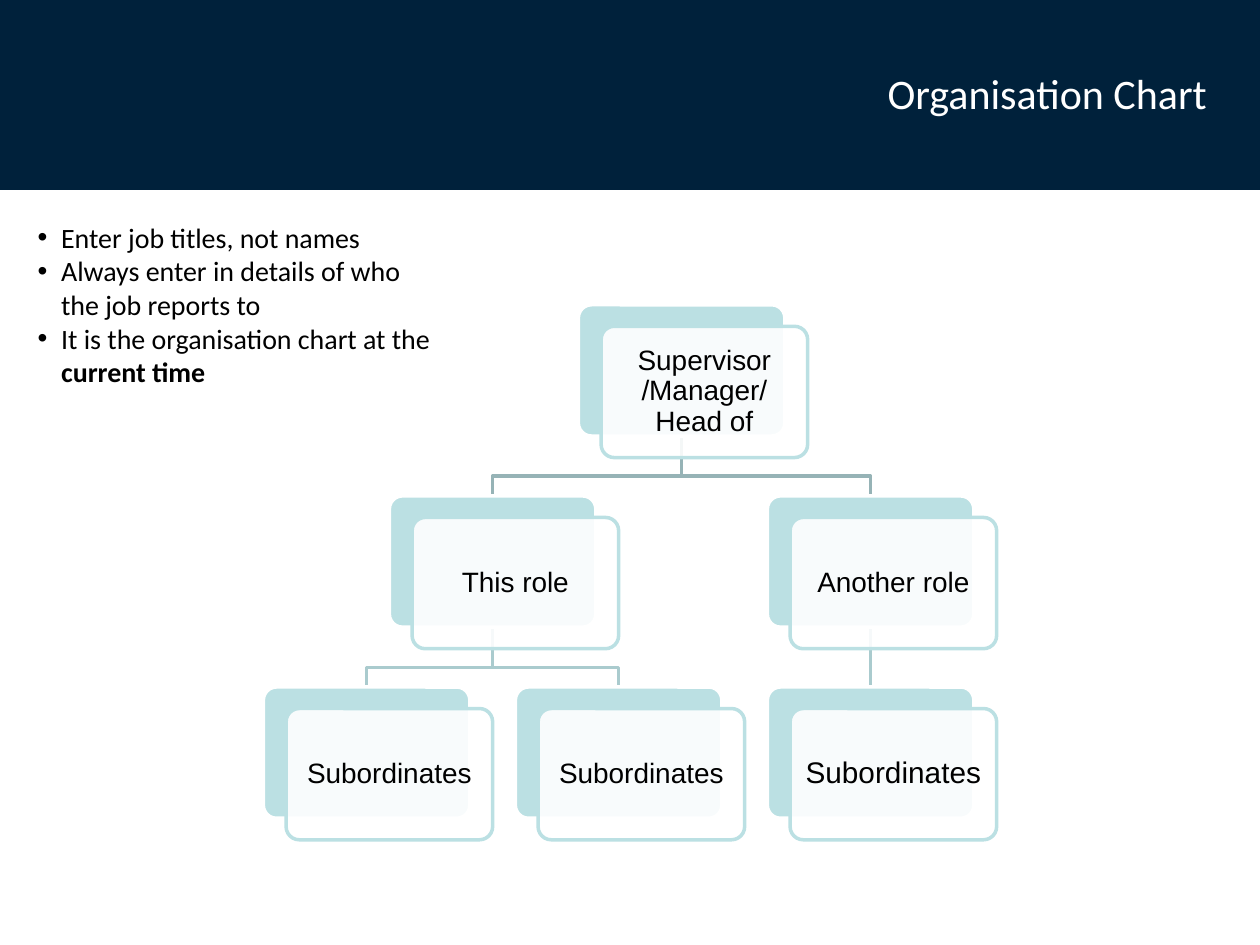
import pptx
import pptx.util
import pptx.dml.color
import pptx.enum.shapes
import pptx.enum.text
import pptx.oxml
import pptx.oxml.ns

Pt = pptx.util.Pt
MSO_SHAPE = pptx.enum.shapes.MSO_SHAPE
ALIGN = pptx.enum.text.PP_ALIGN
MIDDLE = pptx.enum.text.MSO_ANCHOR.MIDDLE


def color(value):
    return pptx.dml.color.RGBColor.from_string(value)


def add_run(p, text, size, name, ink, bold=False):
    r = p.add_run()
    r.text = text
    for key, value in {"size": Pt(size), "name": name, "bold": bold}.items():
        setattr(r.font, key, value)
    r.font.color.rgb = color(ink)


prs = pptx.Presentation()
prs.slide_width, prs.slide_height = Pt(720), Pt(540)
s = prs.slides.add_slide(prs.slide_layouts[6])

band = s.shapes.add_shape(MSO_SHAPE.RECTANGLE, 0, 0, Pt(720), Pt(108.6))
band.shadow.inherit = False
band.fill.solid()
band.fill.fore_color.rgb = color("00213B")
band.line.fill.background()

title = s.shapes.add_textbox(Pt(36.7), Pt(26), Pt(660), Pt(54))
tf = title.text_frame
for key, value in {"word_wrap": True, "vertical_anchor": MIDDLE}.items():
    setattr(tf, key, value)
p = tf.paragraphs[0]
p.alignment = ALIGN.RIGHT
add_run(p, "Organisation Chart", 24, "Calibri", "FFFFFF")

card_w, card_h = 118, 75
top, level_step = 174.2, 109.2
roles = [
    ("Supervisor /Manager/ Head of", 330.5, 0, None, 16),
    ("This role", 222.5, 1, 0, 16),
    ("Subordinates", 150.5, 2, 1, 16),
    ("Subordinates", 294.5, 2, 1, 16),
    ("Another role", 438.5, 1, 0, 16),
    ("Subordinates", 438.5, 2, 4, 17),
]
link_colors = {1: "96B3B6", 2: "AACBCE"}
front_format = {"word_wrap": True, "vertical_anchor": MIDDLE,
                "margin_left": Pt(5), "margin_right": Pt(5),
                "margin_top": Pt(5), "margin_bottom": Pt(5)}

backs = []
for text, left, level, parent, size in roles:
    y = top + level * level_step
    for dx, dy, fill, line in ((0, 0, "BBE0E3", "FFFFFF"), (13, 12.3, "FFFFFF", "BBE0E3")):
        card = s.shapes.add_shape(MSO_SHAPE.ROUNDED_RECTANGLE, Pt(left + dx), Pt(y + dy),
                                  Pt(card_w), Pt(card_h))
        card.adjustments[0] = 0.1
        card.shadow.inherit = False
        card.fill.solid()
        card.fill.fore_color.rgb = color(fill)
        card.line.color.rgb = color(line)
        card.line.width = Pt(2)
        if dx == 0:
            backs.append(card)
    solid = card.element.spPr.find(pptx.oxml.ns.qn("a:solidFill"))
    solid[0].append(pptx.oxml.parse_xml(
        '<a:alpha %s val="90000"/>' % pptx.oxml.ns.nsdecls("a")))
    tf = card.text_frame
    for key, value in front_format.items():
        setattr(tf, key, value)
    p = tf.paragraphs[0]
    for key, value in {"alignment": ALIGN.CENTER, "line_spacing": 0.9}.items():
        setattr(p, key, value)
    add_run(p, text, size, "Arial", "000000")

for i, (text, left, level, parent, size) in enumerate(roles):
    if parent is None:
        continue
    x1, x2 = roles[parent][1] + card_w / 2, left + card_w / 2
    y2 = top + level * level_step
    y1 = y2 - level_step + card_h
    if x1 == x2:
        link = s.shapes.add_connector(pptx.enum.shapes.MSO_CONNECTOR.STRAIGHT,
                                      Pt(x1), Pt(y1), Pt(x2), Pt(y2))
        link.begin_connect(backs[parent], 2)
        link.end_connect(backs[i], 0)
        link.element.spPr.append(pptx.oxml.parse_xml(
            "<a:effectLst %s/>" % pptx.oxml.ns.nsdecls("a")))
    else:
        bend = y2 - 11.3
        fb = s.shapes.build_freeform(Pt(x1), Pt(y1))
        fb.add_line_segments([(Pt(x1), Pt(bend)), (Pt(x2), Pt(bend)), (Pt(x2), Pt(y2))],
                             close=False)
        link = fb.convert_to_shape()
        link.shadow.inherit = False
        link.fill.background()
    link.line.color.rgb = color(link_colors[level])
    link.line.width = Pt(2)
    backs[0].element.addprevious(link.element)

notes = [
    [("Enter job titles, not names", False)],
    [("Always enter in details of who the job reports to", False)],
    [("It is the organisation chart at the ", False), ("current time", True)],
]
guide = s.shapes.add_textbox(Pt(14.4), Pt(122.4), Pt(244), Pt(121))
tf = guide.text_frame
tf.word_wrap = True
for i, parts in enumerate(notes):
    p = tf.paragraphs[0] if i == 0 else tf.add_paragraph()
    pPr = p._p.get_or_add_pPr()
    for key, value in {"marL": Pt(13.5), "indent": -Pt(13.5)}.items():
        pPr.set(key, str(value))
    for xml in ('<a:buFont %s typeface="Arial"/>', '<a:buChar %s char="•"/>'):
        pPr.append(pptx.oxml.parse_xml(xml % pptx.oxml.ns.nsdecls("a")))
    for text, bold in parts:
        add_run(p, text, 16, "Calibri", "000000", bold)

prs.save("out.pptx")
